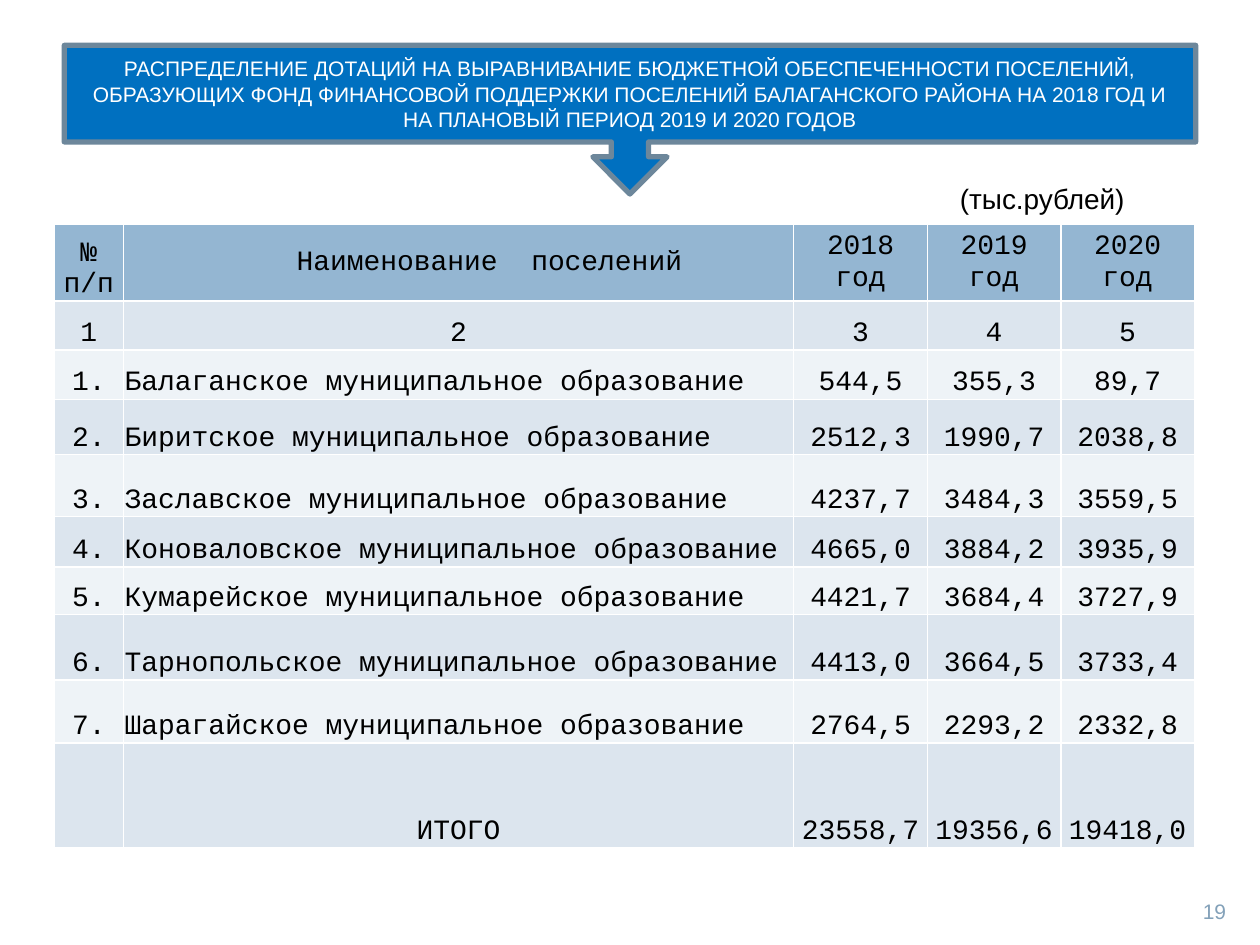
from dataclasses import dataclass

from pptx import Presentation
from pptx.dml.color import RGBColor
from pptx.enum.shapes import MSO_SHAPE as Shape
from pptx.enum.text import MSO_ANCHOR as Anchor, PP_ALIGN as Align
from pptx.util import Inches, Pt


@dataclass(frozen=True)
class Theme:
    sans: str = "Arial"
    mono: str = "Courier New"
    small: int = 12
    body: int = 16
    black: str = "000000"
    white: str = "FFFFFF"
    banner: str = "0070C0"
    banner_line: str = "6D879B"
    page_number: str = "83A1B9"
    header: str = "94B6D2"
    bands: tuple[str, str] = ("DCE5EE", "EEF3F7")


@dataclass(frozen=True)
class Box:
    left: float
    top: float
    width: float
    height: float

    def lengths(self) -> tuple:
        return tuple(map(Inches, (self.left, self.top, self.width, self.height)))


@dataclass(frozen=True)
class Settlement:
    name: str
    grants: tuple[str, str, str]
    height: float


THEME = Theme()
YEARS = (2018, 2019, 2020)
COLUMN_WIDTHS = (0.55, 5.32, 1.06, 1.06, 1.06)
HEADER_HEIGHT, NUMBERING_HEIGHT, TOTAL_HEIGHT = 0.61, 0.39, 0.83
TOTALS = ("23558,7", "19356,6", "19418,0")
SETTLEMENTS = (
    Settlement("Балаганское", ("544,5", "355,3", "89,7"), 0.39),
    Settlement("Биритское", ("2512,3", "1990,7", "2038,8"), 0.44),
    Settlement("Заславское", ("4237,7", "3484,3", "3559,5"), 0.49),
    Settlement("Коноваловское", ("4665,0", "3884,2", "3935,9"), 0.4),
    Settlement("Кумарейское", ("4421,7", "3684,4", "3727,9"), 0.38),
    Settlement("Тарнопольское", ("4413,0", "3664,5", "3733,4"), 0.52),
    Settlement("Шарагайское", ("2764,5", "2293,2", "2332,8"), 0.5),
)
TITLE = (
    "РАСПРЕДЕЛЕНИЕ ДОТАЦИЙ НА ВЫРАВНИВАНИЕ БЮДЖЕТНОЙ ОБЕСПЕЧЕННОСТИ ПОСЕЛЕНИЙ, "
    "ОБРАЗУЮЩИХ ФОНД ФИНАНСОВОЙ ПОДДЕРЖКИ ПОСЕЛЕНИЙ БАЛАГАНСКОГО РАЙОНА "
    "НА 2018 ГОД И НА ПЛАНОВЫЙ ПЕРИОД 2019 И 2020 ГОДОВ"
)


def write(frame, text: str, font: str, size: int, color: str, align: Align) -> None:
    para = frame.paragraphs[0]
    para.alignment = align
    para.font.name = font
    para.font.size = Pt(size)
    para.font.bold = False
    para.font.color.rgb = RGBColor.from_string(color)
    para.add_run().text = text


def add_label(page, box: Box, text: str, size: int, color: str, align: Align) -> None:
    frame = page.shapes.add_textbox(*box.lengths()).text_frame
    frame.word_wrap = True
    write(frame, text, THEME.sans, size, color, align)


def add_banner(page, box: Box) -> None:
    banner = page.shapes.add_shape(Shape.DOWN_ARROW_CALLOUT, *box.lengths())
    banner.shadow.inherit = False
    banner.fill.solid()
    banner.fill.fore_color.rgb = RGBColor.from_string(THEME.banner)
    banner.line.color.rgb = RGBColor.from_string(THEME.banner_line)
    banner.line.width = Pt(3)
    frame = banner.text_frame
    frame.word_wrap = True
    frame.vertical_anchor = Anchor.MIDDLE
    write(frame, TITLE, THEME.sans, THEME.small, THEME.white, Align.CENTER)


def fill_cell(cell, text: str, color: str, align: Align, anchor: Anchor,
              indent: float = 0.01) -> None:
    cell.fill.solid()
    cell.fill.fore_color.rgb = RGBColor.from_string(color)
    cell.margin_left = Inches(indent)
    cell.margin_right = cell.margin_top = Inches(0.01)
    cell.margin_bottom = 0
    cell.vertical_anchor = anchor
    if text:
        write(cell.text_frame, text, THEME.mono, THEME.body, THEME.black, align)


def add_grants_table(page, left: float, top: float) -> None:
    header = ("№ п/п ", "Наименование  поселений", *(f"{year} год" for year in YEARS))
    rows = [
        tuple(str(n) for n in range(1, len(COLUMN_WIDTHS) + 1)),
        *((f"{n}.", f"{place.name} муниципальное образование", *place.grants)
          for n, place in enumerate(SETTLEMENTS, 1)),
        ("", "ИТОГО", *TOTALS),
    ]
    heights = (HEADER_HEIGHT, NUMBERING_HEIGHT,
               *(place.height for place in SETTLEMENTS), TOTAL_HEIGHT)
    box = Box(left, top, sum(COLUMN_WIDTHS), sum(heights))
    table = page.shapes.add_table(
        len(heights), len(COLUMN_WIDTHS), *box.lengths()).table
    for column, width in zip(table.columns, COLUMN_WIDTHS):
        column.width = Inches(width)
    for row, height in zip(table.rows, heights):
        row.height = Inches(height)

    # Header row
    for c, text in enumerate(header):
        fill_cell(table.cell(0, c), text, THEME.header, Align.CENTER,
                  Anchor.MIDDLE if c else Anchor.BOTTOM, 0.5 if c == 1 else 0.01)

    # Banded body: settlement names are left-aligned, the rest is centred
    for r, texts in enumerate(rows, 1):
        is_settlement = 1 < r <= len(SETTLEMENTS) + 1
        for c, text in enumerate(texts):
            align = Align.LEFT if is_settlement and c == 1 else Align.CENTER
            fill_cell(table.cell(r, c), text, THEME.bands[(r - 1) % 2],
                      align, Anchor.BOTTOM)


def main() -> None:
    deck = Presentation()
    deck.slide_width, deck.slide_height = Inches(10), Inches(7.5)
    page = deck.slides.add_slide(deck.slide_layouts[6])

    add_label(page, Box(9, 7.08, 0.83, 0.27), "19", THEME.small,
              THEME.page_number, Align.RIGHT)
    add_grants_table(page, 0.43, 1.78)
    add_banner(page, Box(0.51, 0.36, 8.98, 1.18))
    add_label(page, Box(7.52, 1.39, 1.57, 0.37), "(тыс.рублей)", THEME.body,
              THEME.black, Align.LEFT)

    deck.save("out.pptx")


if __name__ == "__main__":
    main()
